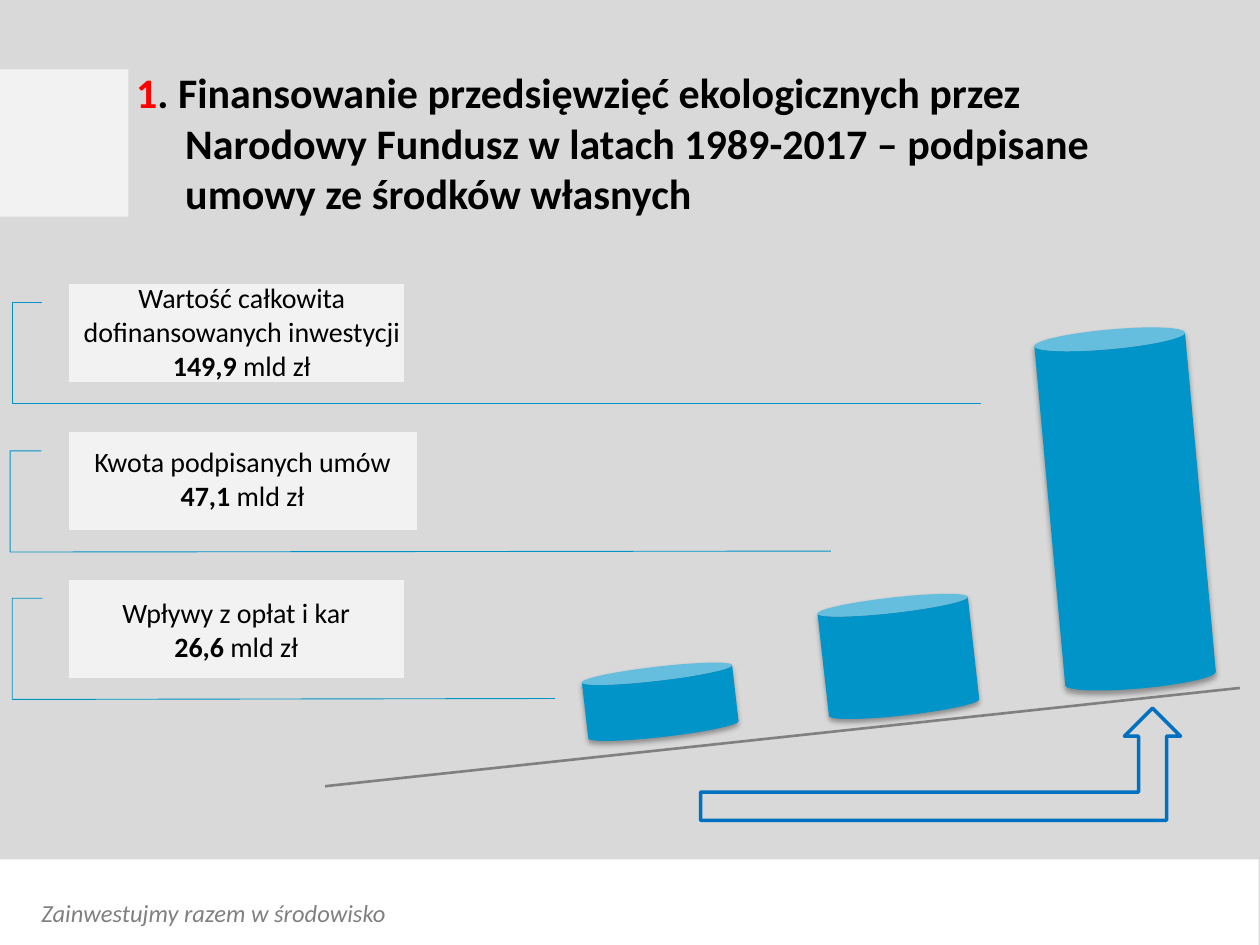
"""Build the slide on financing of ecological projects."""
from dataclasses import dataclass

from lxml.etree import SubElement
from pptx import Presentation
from pptx.dml.color import RGBColor as Rgb
from pptx.enum.shapes import MSO_CONNECTOR as Conn, MSO_SHAPE as Geo
from pptx.enum.text import MSO_ANCHOR as Anchor, MSO_AUTO_SIZE as Fit, PP_ALIGN as Align
from pptx.oxml.ns import qn
from pptx.util import Inches, Pt


@dataclass(frozen=True)
class Theme:
    """Hold the colours, font and type sizes."""
    ground: str = "D9D9D9"
    white: str = "FFFFFF"
    panel: str = "F2F2F2"
    black: str = "000000"
    red: str = "FF0000"
    grey: str = "808080"
    blue: str = "0094C8"
    arrow: str = "0070C0"
    font: str = "Calibri"
    head: int = 24
    label: int = 16
    foot: int = 14


THEME = Theme()


def tint(fill, hue):
    """Give a fill one solid colour."""
    fill.solid()
    fill.fore_color.rgb = Rgb.from_string(hue)


def add_run(para, text, size, hue, bold=False, italic=False):
    """Add one formatted run to a paragraph."""
    run = para.add_run()
    run.text = text
    font = run.font
    font.name, font.size = THEME.font, Pt(size)
    font.bold, font.italic = bold, italic
    font.color.rgb = Rgb.from_string(hue)


def add_form(slide, geo, box, fill=None, line=None, width=1):
    """Add a preset shape without a shadow."""
    form = slide.shapes.add_shape(geo, *map(Inches, box))
    form.shadow.inherit = False
    if fill:
        tint(form.fill, fill)
    else:
        form.fill.background()
    if line:
        tint(form.line.fill, line)
        form.line.width = Pt(width)
    else:
        form.line.fill.background()
    return form


def add_veil(slide, box, alpha):
    """Add a white rectangle with an opacity in percent."""
    veil = add_form(slide, Geo.RECTANGLE, box, THEME.white)
    hue = veil.element.spPr.find(qn("a:solidFill"))[0]
    SubElement(hue, qn("a:alpha"), val=str(alpha * 1000))


def add_can(slide, box, turn, rim):
    """Add a tilted cylinder with a soft shadow."""
    can = add_form(slide, Geo.CAN, box, THEME.blue)
    can.rotation = turn
    can.adjustments[0] = rim
    glow = SubElement(can.element.spPr.find(qn("a:effectLst")), qn("a:outerShdw"),
                      blurRad=str(Pt(3.1)), dist=str(Pt(1.8)),
                      dir=str(90 * 60000), rotWithShape="0")
    hue = SubElement(glow, qn("a:srgbClr"), val=THEME.black)
    SubElement(hue, qn("a:alpha"), val="35000")


def add_call(slide, top, width, tip):
    """Add a panel whose leader line ends at the tip."""
    call = add_form(slide, Geo.LINE_CALLOUT_3_NO_BORDER, (0.55, top, width, 0.78),
                    THEME.panel, THEME.blue, 0.5)
    bends = (0.19, -0.08, 0.19, -0.17, 1.22, -0.17, *tip)
    for spot, bend in enumerate(bends):
        call.adjustments[spot] = bend


def add_text(slide, box, wrap):
    """Add a text box and return its frame."""
    frame = slide.shapes.add_textbox(*map(Inches, box)).text_frame
    frame.word_wrap = wrap
    return frame


def add_label(slide, box, lines, sum_):
    """Add centred label lines above a bold sum."""
    frame = add_text(slide, box, False)
    for spot in range(len(lines) + 1):
        para = frame.add_paragraph() if spot else frame.paragraphs[0]
        para.alignment = Align.CENTER
        if spot < len(lines):
            add_run(para, lines[spot], THEME.label, THEME.black)
        else:
            add_run(para, f"{sum_} ", THEME.label, THEME.black, bold=True)
            add_run(para, "mld zł", THEME.label, THEME.black)


def add_title(slide):
    """Place the title with a hanging indent."""
    title = slide.shapes.title
    title.left, title.top, title.width, title.height = map(Inches, (0.98, 0.48, 8.86, 1.31))
    frame = title.text_frame
    frame.word_wrap, frame.auto_size = True, Fit.NONE
    frame.vertical_anchor = Anchor.TOP
    frame.margin_right = Inches(0.4)
    para = frame.paragraphs[0]
    para.alignment = Align.LEFT
    props = para._p.get_or_add_pPr()
    props.set("marL", str(Inches(0.39)))
    props.set("indent", str(Inches(-0.39)))
    add_run(para, "1", THEME.head, THEME.red, bold=True)
    add_run(para, ". Finansowanie przedsięwzięć ekologicznych przez Narodowy Fundusz "
            "w latach 1989-2017 – podpisane umowy ze środków własnych",
            THEME.head, THEME.black, bold=True)


def add_slope(slide, start, end):
    """Add the grey line under the cylinders."""
    slope = slide.shapes.add_connector(Conn.STRAIGHT, *map(Inches, (*start, *end)))
    tint(slope.line.fill, THEME.grey)
    slope.line.width = Pt(1.5)
    SubElement(slope.element.spPr, qn("a:effectLst"))


def main():
    """Build and save the deck."""
    deck = Presentation()
    deck.slide_width, deck.slide_height = Inches(10), Inches(7.5)
    slide = deck.slides.add_slide(deck.slide_layouts[5])
    tint(slide.background.fill, THEME.ground)
    add_form(slide, Geo.RECTANGLE, (0, 6.82, 9.99, 0.68), THEME.white)
    foot = add_text(slide, (0.23, 7.08, 4.22, 0.34), True)
    add_run(foot.paragraphs[0], "Zainwestujmy razem w środowisko",
            THEME.foot, THEME.grey, italic=True)
    add_veil(slide, (0, 0.55, 1.02, 1.17), 66)
    add_title(slide)

    rows = (
        (2.25, 2.66, (1.22, 2.72), (0.55, 2.18, 2.74, 0.91),
         ("Wartość całkowita", "dofinansowanych inwestycji"), "149,9"),
        (3.43, 2.76, (1.21, 2.19), (0.63, 3.48, 2.59, 0.64),
         ("Kwota podpisanych umów",), "47,1"),
        (4.6, 2.66, (1.21, 1.45), (0.85, 4.68, 2.05, 0.64),
         ("Wpływy z opłat i kar",), "26,6"),
    )
    for top, width, tip, box, lines, sum_ in rows:
        add_call(slide, top, width, tip)
        add_label(slide, box, lines, sum_)

    cans = (
        (4.64, 5.29, 0.56, 353.4, 0.2),
        (6.53, 4.74, 0.94, 353.6, 0.13),
        (8.33, 2.61, 2.86, 354.8, 0.13),
    )
    for left, top, height, turn, rim in cans:
        add_can(slide, (left, top, 1.2, height), turn, rim)

    add_slope(slide, (2.58, 6.24), (9.84, 5.46))
    add_form(slide, Geo.BENT_UP_ARROW, (5.56, 5.62, 3.81, 0.89),
             line=THEME.arrow, width=2)
    deck.save("out.pptx")


if __name__ == "__main__":
    main()
